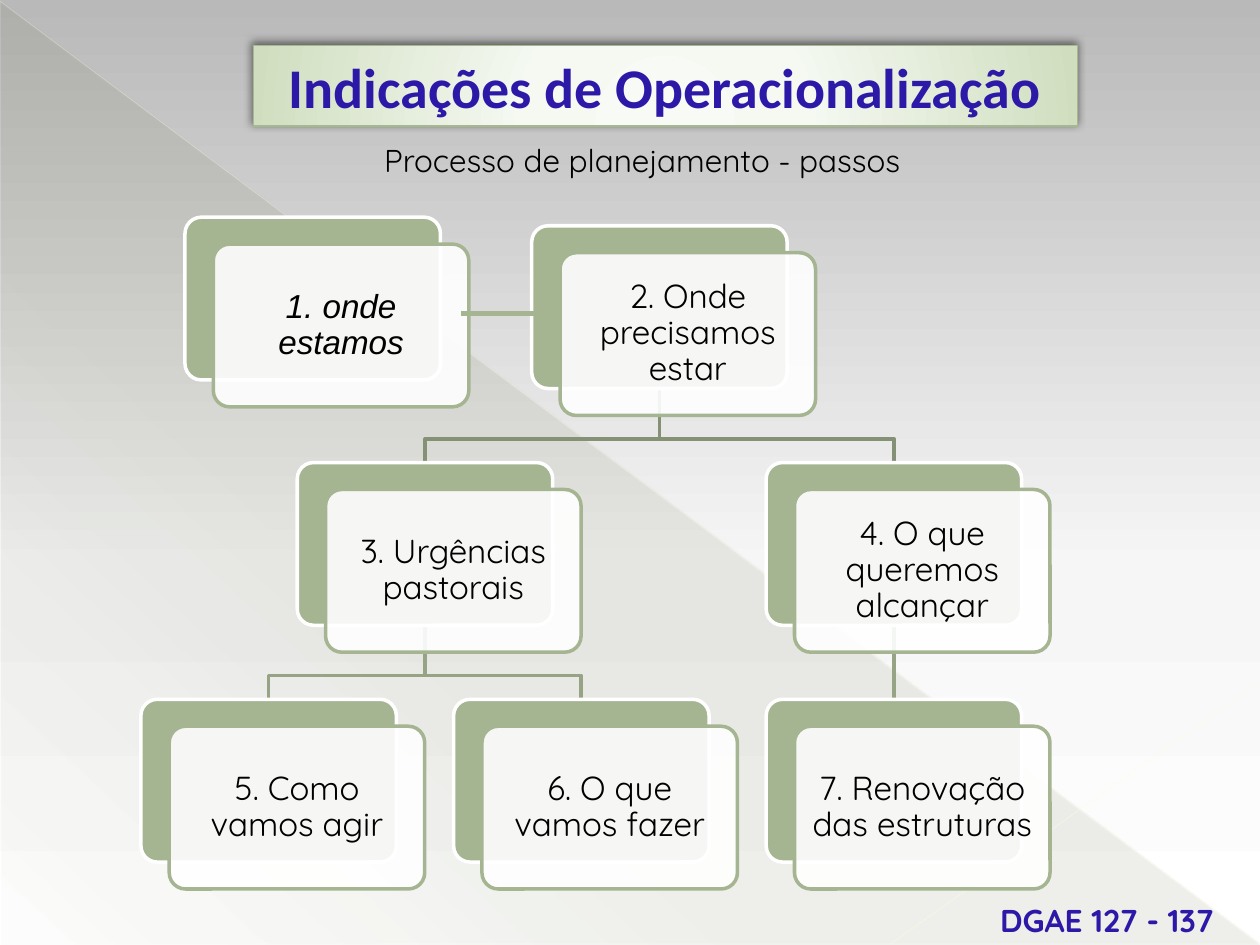
from lxml.etree import SubElement
from pptx import Presentation
from pptx.dml.color import RGBColor
from pptx.enum.shapes import MSO_CONNECTOR, MSO_SHAPE
from pptx.enum.text import MSO_ANCHOR, PP_ALIGN
from pptx.oxml.ns import qn
from pptx.util import Pt

WHITE = RGBColor(0xFF, 0xFF, 0xFF)
BLACK = RGBColor(0, 0, 0)
BLUE = RGBColor(0x2D, 0x19, 0xA7)
GREEN = RGBColor(0xA5, 0xB5, 0x92)
EDGE = RGBColor(0xA5, 0xB8, 0x8E)
DARK = RGBColor(0x84, 0x91, 0x75)
MID = RGBColor(0x96, 0xA4, 0x85)
CREAM = RGBColor(0xFF, 0xFD, 0xE3)
OLIVE = RGBColor(0x44, 0x4D, 0x26)
GREY = RGBColor(0xB9, 0xB9, 0xB9)
PALE = RGBColor(0xF6, 0xF6, 0xF6)
MINT = RGBColor(0xF8, 0xFB, 0xF5)
MIST = RGBColor(0xF5, 0xF9, 0xF2)
LEAF = RGBColor(0xD0, 0xDE, 0xBF)

WIDE, HIGH = 146, 93
COLS = [80.5, 259.2, 437.8]
ROWS = [129, 264.3, 399.6]
FORK = (COLS[0] + COLS[1]) / 2
TOP = (FORK + COLS[2]) / 2
CARDS = [
    ("2. Onde precisamos estar", TOP, ROWS[0]),
    ("3. Urgências pastorais", FORK, ROWS[1]),
    ("5. Como vamos agir", COLS[0], ROWS[2]),
    ("6. O que vamos fazer", COLS[1], ROWS[2]),
    ("4. O que queremos alcançar", COLS[2], ROWS[1]),
    ("7. Renovação das estruturas", COLS[2], ROWS[2]),
]
LINKS = [
    (COLS[2], COLS[2], 1, MID),
    (TOP, COLS[2], 0, DARK),
    (FORK, COLS[1], 1, MID),
    (FORK, COLS[0], 1, MID),
    (TOP, FORK, 0, DARK),
]


def add(node, tag, **attrs):
    return SubElement(node, qn(tag), {k: str(v) for k, v in attrs.items()})


def fade(node, alpha):
    add(node, "a:alpha", val=alpha * 1000)


class Deck:
    font = "Quicksand"

    def __init__(self):
        self.deck = Presentation()
        self.deck.slide_width, self.deck.slide_height = Pt(720), Pt(540)
        self.slide = self.deck.slides.add_slide(self.deck.slide_layouts[6])
        self.shapes = self.slide.shapes

    def blend(self, fill, root, stops, angle=None):
        fill.gradient()
        grad = next(root.iter(qn("a:gradFill")))
        for child in list(grad):
            grad.remove(child)
        group = add(grad, "a:gsLst")
        for pos, color, alpha in stops:
            stop = add(group, "a:gs", pos=pos * 1000)
            fade(add(stop, "a:srgbClr", val=color), alpha)
        if angle is None:
            ring = add(grad, "a:path", path="circle")
            add(ring, "a:fillToRect", l=50000, t=155000, r=50000, b=-55000)
        else:
            add(grad, "a:lin", ang=angle * 60000, scaled=0)

    def back(self, stops):
        self.blend(self.slide.background.fill, self.slide.element, stops, 90)

    def shape(self, kind, x, y, w, h, line=None, width=1):
        item = self.shapes.add_shape(kind, Pt(x), Pt(y), Pt(w), Pt(h))
        item.shadow.inherit = False
        self.stroke(item, line, width)
        return item

    def stroke(self, item, color, width):
        if color is None:
            item.line.fill.background()
        else:
            item.line.color.rgb = color
            item.line.width = Pt(width)

    def line(self, x1, y1, x2, y2, color, width, alpha=100):
        item = self.shapes.add_connector(
            MSO_CONNECTOR.STRAIGHT, Pt(x1), Pt(y1), Pt(x2), Pt(y2))
        self.stroke(item, color, width)
        props = item.element.spPr
        if alpha < 100:
            fade(next(props.iter(qn("a:srgbClr"))), alpha)
        add(props, "a:effectLst")

    def link(self, start, end, row, color):
        x1, x2 = start + WIDE / 2, end + WIDE / 2
        y1, y2 = ROWS[row] + HIGH, ROWS[row + 1]
        bend = y1 + 28.8
        form = self.shapes.build_freeform(Pt(x1), Pt(y1), scale=1.0)
        spots = [(x2, y2)] if x1 == x2 else [(x1, bend), (x2, bend), (x2, y2)]
        form.add_line_segments([(Pt(x), Pt(y)) for x, y in spots], close=False)
        item = form.convert_to_shape()
        item.shadow.inherit = False
        item.fill.background()
        self.stroke(item, color, 2)

    def label(self, item, text, size, color=BLACK, font=None, bold=False,
              slant=False, align=PP_ALIGN.LEFT):
        item.text_frame.word_wrap = True
        para = item.text_frame.paragraphs[0]
        para.alignment = align
        run = para.add_run()
        run.text = text
        face = run.font
        face.name, face.size = font or self.font, Pt(size)
        face.bold, face.italic = bold, slant
        face.color.rgb = color
        return para

    def text(self, x, y, w, h, text, size, **style):
        box = self.shapes.add_textbox(Pt(x), Pt(y), Pt(w), Pt(h))
        self.label(box, text, size, **style)

    def card(self, text, x, y, **style):
        for step, fill, line in ((0, GREEN, WHITE), (1, WHITE, GREEN)):
            item = self.shape(MSO_SHAPE.ROUNDED_RECTANGLE, x + 16.2 * step,
                              y + 15.4 * step, WIDE, HIGH, line, 2)
            item.adjustments[0] = 0.1
            item.fill.solid()
            item.fill.fore_color.rgb = fill
        fade(next(item.element.spPr.iter(qn("a:srgbClr"))), 90)
        frame = item.text_frame
        frame.margin_left = frame.margin_right = Pt(5.7)
        frame.margin_top = frame.margin_bottom = Pt(5.7)
        frame.vertical_anchor = MSO_ANCHOR.MIDDLE
        para = self.label(item, text, 19, align=PP_ALIGN.CENTER, **style)
        para.line_spacing = 0.9

    def title(self, text):
        item = self.shape(MSO_SHAPE.RECTANGLE, 144.7, 25.9, 470.9, 46.1, EDGE, 0.75)
        props = item.element.spPr
        self.blend(item.fill, props,
                   [(0, MINT, 100), (34, MIST, 100), (100, LEAF, 100)])
        glow = add(props.find(qn("a:effectLst")), "a:outerShdw", blurRad=Pt(5),
                   dist=Pt(2), dir=245 * 60000, rotWithShape=0)
        fade(add(glow, "a:srgbClr", val=BLACK), 50)
        self.label(item, text, 32, BLUE, "Calibri", True, align=PP_ALIGN.CENTER)

    def wedge(self):
        item = self.shape(MSO_SHAPE.RIGHT_TRIANGLE, 0.7, 1.4, 719.3, 538.6)
        self.blend(item.fill, item.element.spPr,
                   [(0, OLIVE, 10), (70, OLIVE, 8), (100, OLIVE, 1)], 133)


def main():
    deck = Deck()
    deck.back([(0, GREY, 100), (60, PALE, 100), (100, WHITE, 100)])
    deck.wedge()
    deck.line(0, 0.7, 719.3, 539.3, CREAM, 0.39, 35)
    deck.line(720, 389.5, 509, 539.3, CREAM, 0.47, 45)
    deck.title("Indicações de Operacionalização")
    for link in LINKS:
        deck.link(*link)
    for card in CARDS:
        deck.card(*card)
    deck.card("1. onde estamos", 105.7, 124.1, font="Arial", slant=True)
    deck.line(263.5, 179.3, 314.6, 179.3, GREEN, 3)
    deck.text(212.4, 77, 339.8, 28.8, "Processo de planejamento - passos", 18)
    deck.text(564.5, 511.2, 204.5, 28.8, "DGAE 127 - 137", 18,
              color=BLUE, bold=True)
    deck.deck.save("out.pptx")


if __name__ == "__main__":
    main()
